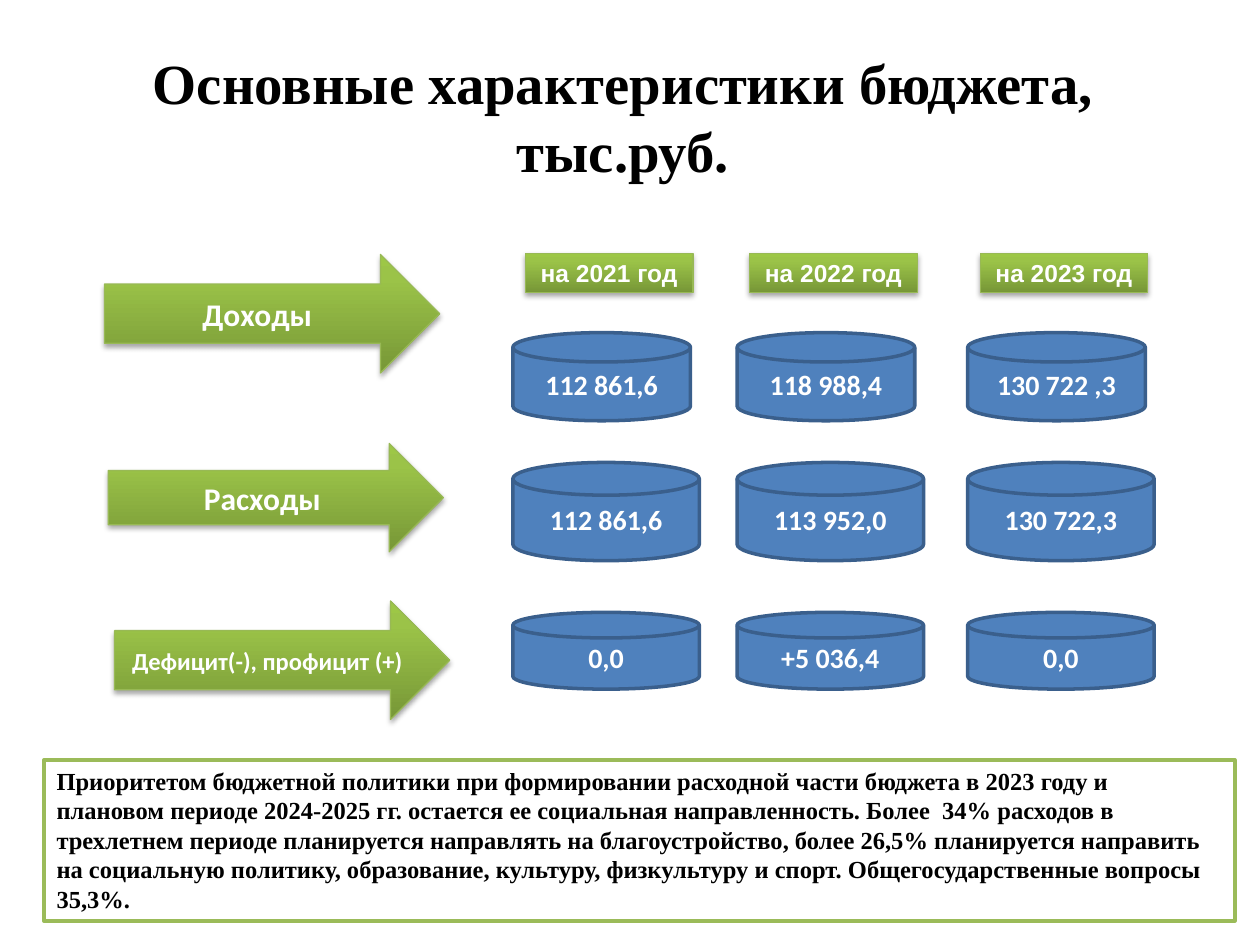
from dataclasses import dataclass

from lxml import etree
from pptx import Presentation
from pptx.dml.color import RGBColor
from pptx.enum.shapes import MSO_SHAPE
from pptx.enum.text import MSO_ANCHOR, MSO_AUTO_SIZE, PP_ALIGN
from pptx.oxml.ns import qn
from pptx.util import Inches, Pt

ARROW, BOX = MSO_SHAPE.RIGHT_ARROW, MSO_SHAPE.RECTANGLE
DISK = MSO_SHAPE.FLOWCHART_MAGNETIC_DISK
LEFT, CENTER = PP_ALIGN.LEFT, PP_ALIGN.CENTER
TOP, MIDDLE, BOTTOM = MSO_ANCHOR.TOP, MSO_ANCHOR.MIDDLE, MSO_ANCHOR.BOTTOM
FIXED, GROW = MSO_AUTO_SIZE.NONE, MSO_AUTO_SIZE.SHAPE_TO_FIT_TEXT
TITLE_ONLY = 5
UNIT = 0.1  # grid step in inches: 100 columns by 75 rows


@dataclass(frozen=True)
class Theme:
    white: str = "FFFFFF"
    black: str = "000000"
    blue: str = "4F81BD"
    navy: str = "3A5F8C"
    green: str = "9BBB59"
    edge: str = "98B955"
    fade: tuple = ((0, "779737"), (80, "9BC348"), (100, "9DC746"))
    serif: str = "Times New Roman"
    sans: str = "Arial"
    body: str = "Calibri"
    head: float = 32.4
    large: int = 18
    mid: int = 16
    small: int = 14


def grid(*cells):
    return [Inches(c * UNIT) for c in cells]


def rgb(code):
    return RGBColor.from_string(code)


def tint(node, code):
    return etree.SubElement(node, qn("a:srgbClr"), val=code)


class Board:
    def __init__(self, slide, theme):
        self.slide, self.theme = slide, theme

    def label(self, shape, text, size, font, color, align=CENTER, anchor=MIDDLE):
        frame = shape.text_frame
        frame.word_wrap, frame.vertical_anchor = True, anchor
        para = frame.paragraphs[0]
        para.alignment = align
        run = para.add_run()
        run.text = text
        run.font.size, run.font.name, run.font.bold = Pt(size), font, True
        run.font.color.rgb = rgb(color)
        return frame

    def shape(self, kind, area, fill, edge, width):
        item = self.slide.shapes.add_shape(kind, *grid(*area))
        item.shadow.inherit = False
        if fill:
            item.fill.solid()
            item.fill.fore_color.rgb = rgb(fill)
        item.line.color.rgb, item.line.width = rgb(edge), Pt(width)
        return item

    def title(self, area, text):
        t = self.theme
        item = self.slide.shapes.title
        item.left, item.top, item.width, item.height = grid(*area)
        frame = self.label(item, text, t.head, t.serif, t.black, anchor=BOTTOM)
        frame.auto_size, frame.margin_bottom = FIXED, Inches(0.1)

    def badge(self, kind, area, text, size, font):
        """Green shape with a vertical gradient and a soft shadow."""
        t = self.theme
        item = self.shape(kind, area, None, t.edge, 0.75)
        item.fill.gradient()
        item.fill.gradient_angle = 90
        props = item._element.spPr
        stops = props.find(qn("a:gradFill")).find(qn("a:gsLst"))
        for old in list(stops):
            stops.remove(old)
        for place, code in t.fade:
            tint(etree.SubElement(stops, qn("a:gs"), pos=str(place * 1000)), code)
        cast = etree.SubElement(
            props.find(qn("a:effectLst")), qn("a:outerShdw"),
            blurRad=str(Pt(3.1)), dist=str(Pt(1.8)), dir="5400000", rotWithShape="0")
        etree.SubElement(tint(cast, t.black), qn("a:alpha"), val="35000")
        self.label(item, text, size, font, t.white)

    def disk(self, area, text):
        t = self.theme
        item = self.shape(DISK, area, t.blue, t.navy, 2)
        self.label(item, text, t.mid, t.body, t.white)

    def note(self, area, text):
        t = self.theme
        item = self.shape(BOX, area, t.white, t.green, 2)
        frame = self.label(item, text, t.small, t.serif, t.black, LEFT, TOP)
        frame.auto_size = GROW


def main():
    deck = Presentation()
    deck.slide_width, deck.slide_height = grid(100, 75)
    theme = Theme()
    board = Board(deck.slides.add_slide(deck.slide_layouts[TITLE_ONLY]), theme)

    board.title((2.2, 9.3, 94.5, 6.3), "Основные характеристики бюджета, тыс.руб.")

    cols = (40.7, 58.5, 76.8)
    for col, year in zip(cols, (2021, 2022, 2023)):
        board.badge(BOX, (col + 1, 20.1, 13.3, 3.1), f"на {year} год",
                    theme.small, theme.sans)

    # name, type size, arrow (left, top, height), disk (top, width, height), values
    rows = (
        ("Доходы", theme.large, (8.3, 20.2, 9.4), (26.4, 14.1, 7),
         ("112 861,6", "118 988,4", "130 722 ,3")),
        ("Расходы", theme.large, (8.6, 35.2, 8.6), (36.7, 14.8, 7.8),
         ("112 861,6", "113 952,0", "130 722,3")),
        ("Дефицит(-), профицит (+)", theme.small, (9.1, 47.7, 9.4), (48.6, 14.8, 6.1),
         ("0,0", "+5 036,4", "0,0")),
    )
    for name, size, (left, top, high), (row, wide, deep), values in rows:
        board.badge(ARROW, (left, top, 26.6, high), name, size, theme.body)
        for col, value in zip(cols, values):
            board.disk((col, row, wide, deep), value)

    board.note(
        (3.5, 60.3, 94.5, 12.8),
        "Приоритетом бюджетной политики при формировании расходной части бюджета "
        "в 2023 году и плановом периоде 2024-2025 гг. остается ее социальная "
        "направленность. Более  34% расходов в трехлетнем периоде планируется "
        "направлять на благоустройство, более 26,5% планируется направить на "
        "социальную политику, образование, культуру, физкультуру и спорт. "
        "Общегосударственные вопросы 35,3%.")

    deck.save("out.pptx")


if __name__ == "__main__":
    main()
